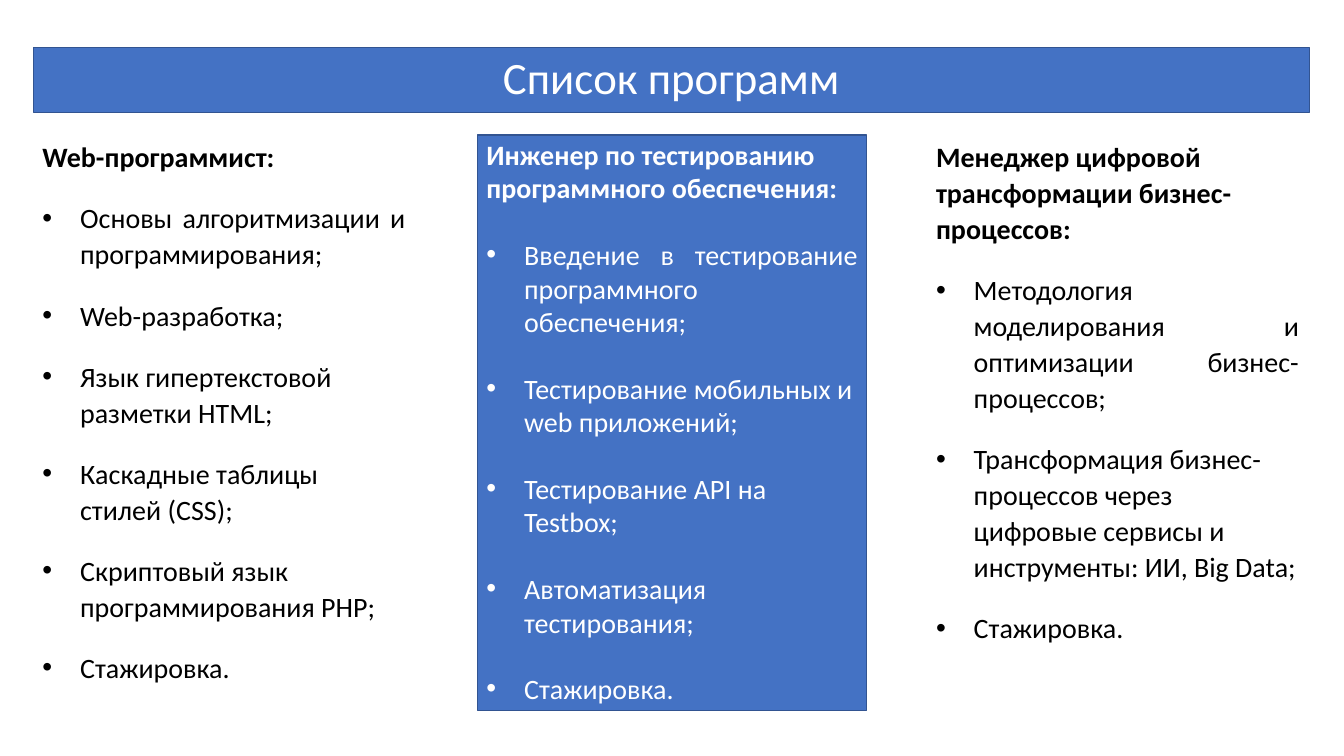
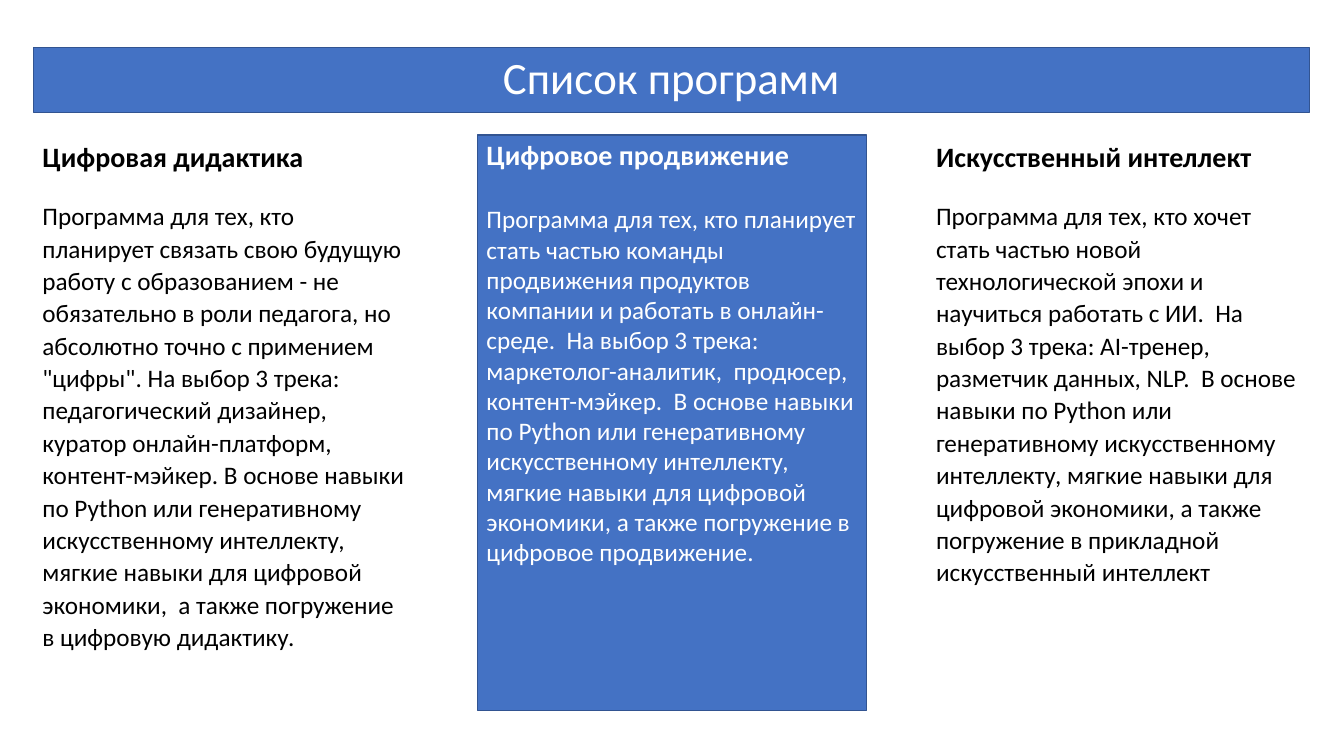
from dataclasses import dataclass

from lxml.etree import SubElement
from pptx import Presentation
from pptx.dml.color import RGBColor
from pptx.enum.shapes import MSO_SHAPE
from pptx.enum.text import MSO_ANCHOR, PP_ALIGN
from pptx.oxml.ns import qn
from pptx.util import Cm, Pt


# Theme: colours, font, type sizes in points
@dataclass(frozen=True)
class Theme:
    fill: RGBColor = RGBColor(0x44, 0x72, 0xC4)
    edge: RGBColor = RGBColor(0x32, 0x54, 0x91)
    dark: RGBColor = RGBColor(0, 0, 0)
    light: RGBColor = RGBColor(255, 255, 255)
    font: str = "Calibri"
    title: int = 32
    head: int = 20
    body: int = 18


@dataclass(frozen=True)
class Box:
    left: float
    top: float
    width: float
    height: float

    def cm(self) -> tuple:
        return Cm(self.left), Cm(self.top), Cm(self.width), Cm(self.height)


# Paragraph spacing of a column: line factor, points before and after
@dataclass(frozen=True)
class Gap:
    line: float
    before: float
    after: float


@dataclass(frozen=True)
class Item:
    text: str
    just: bool = False


@dataclass(frozen=True)
class Column:
    head: str
    items: tuple = ()
    prose: str = ""


THEME = Theme()
TITLE = "Список программ"
INDENT = Cm(0.95)
BAND = Box(0.84, 1.2, 32.16, 1.63)
PANEL = Box(12.04, 3.4, 9.8, 14.5)
LEFT = Box(0.82, 3.34, 9.65, 15.37)
RIGHT = Box(23.34, 3.34, 9.65, 15.37)
SIDE, TOP = Cm(0.22), Cm(0.06)
LOOSE = Gap(1.07, 10, 8)
TIGHT = Gap(1, 23.5, 0)
END = Item("Стажировка.", True)

# Content: left, middle and right column of each slide
SLIDES = (
    (
        Column("Web-программист:", (
            Item("Основы алгоритмизации и программирования;", True),
            Item("Web-разработка;", True),
            Item("Язык гипертекстовой разметки HTML;"),
            Item("Каскадные таблицы стилей (CSS);"),
            Item("Скриптовый язык программирования PHP;"),
            END,
        )),
        Column("Инженер по тестированию программного обеспечения:", (
            Item("Введение в тестирование программного обеспечения;", True),
            Item("Тестирование мобильных и web приложений;"),
            Item("Тестирование API на Testbox;"),
            Item("Автоматизация тестирования;", True),
            END,
        )),
        Column("Менеджер цифровой трансформации бизнес-процессов:", (
            Item("Методология моделирования и оптимизации бизнес-процессов;", True),
            Item("Трансформация бизнес-процессов через цифровые сервисы "
                 "и инструменты: ИИ, Big Data;"),
            END,
        )),
    ),
    (
        Column("Цифровая дидактика", prose=(
            "Программа для тех, кто планирует связать свою будущую работу "
            "с образованием - не обязательно в роли педагога, но абсолютно "
            "точно с примением \"цифры\". На выбор 3 трека: педагогический "
            "дизайнер, куратор онлайн-платформ, контент-мэйкер. В основе "
            "навыки по Python или генеративному искусственному интеллекту, "
            "мягкие навыки для цифровой экономики,  а также погружение "
            "в цифровую дидактику.")),
        Column("Цифровое продвижение", prose=(
            "Программа для тех, кто планирует стать частью команды "
            "продвижения продуктов компании и работать в онлайн-среде.  "
            "На выбор 3 трека: маркетолог-аналитик,  продюсер, "
            "контент-мэйкер.  В основе навыки по Python или генеративному "
            "искусственному интеллекту, мягкие навыки для цифровой "
            "экономики, а также погружение в цифровое продвижение.")),
        Column("Искусственный интеллект", prose=(
            "Программа для тех, кто хочет стать частью новой технологической "
            "эпохи и научиться работать с ИИ.  На выбор 3 трека: AI-тренер,  "
            "разметчик данных, NLP.  В основе навыки по Python или "
            "генеративному искусственному интеллекту, мягкие навыки для "
            "цифровой экономики, а также погружение в прикладной "
            "искусственный интеллект")),
    ),
)


# Text helpers
def style(para, text: str, size: int, color: RGBColor, bold: bool = False,
          align=PP_ALIGN.LEFT) -> None:
    para.text = text
    para.alignment = align
    font = para.font
    font.name, font.size, font.bold = THEME.font, Pt(size), bold
    font.color.rgb = color


def space(para, gap: Gap) -> None:
    para.line_spacing = gap.line
    para.space_before = Pt(gap.before)
    para.space_after = Pt(gap.after)


def bullet(para) -> None:
    props = para._p.get_or_add_pPr()
    props.set("marL", str(INDENT))
    props.set("indent", str(-INDENT))
    SubElement(props, qn("a:buFont")).set("typeface", "Arial")
    SubElement(props, qn("a:buChar")).set("char", "•")


# Slide parts
def block(slide, box: Box, anchor):
    shape = slide.shapes.add_shape(MSO_SHAPE.RECTANGLE, *box.cm())
    shape.shadow.inherit = False
    shape.fill.solid()
    shape.fill.fore_color.rgb = THEME.fill
    shape.line.color.rgb = THEME.edge
    shape.line.width = Pt(1)
    shape.text_frame.vertical_anchor = anchor
    return shape.text_frame


def panel(slide):
    frame = block(slide, PANEL, MSO_ANCHOR.TOP)
    frame.margin_left = frame.margin_right = SIDE
    frame.margin_top = TOP
    return frame


def plain(slide, box: Box):
    return slide.shapes.add_textbox(*box.cm()).text_frame


def write(frame, col: Column, color: RGBColor, gap: Gap) -> None:
    frame.word_wrap = True
    style(frame.paragraphs[0], col.head, THEME.head, color, bold=True)
    frame.paragraphs[0].line_spacing = gap.line
    frame.paragraphs[0].space_after = Pt(gap.after)
    for item in col.items:
        para = frame.add_paragraph()
        bullet(para)
        space(para, gap)
        align = PP_ALIGN.JUSTIFY if item.just else PP_ALIGN.LEFT
        style(para, item.text, THEME.head, color, align=align)
    if col.prose:
        para = frame.add_paragraph()
        space(para, gap)
        style(para, col.prose, THEME.body, color)


def draw(slide, cols: tuple) -> None:
    band = block(slide, BAND, MSO_ANCHOR.MIDDLE).paragraphs[0]
    band.line_spacing = 0.9
    style(band, TITLE, THEME.title, THEME.light, align=PP_ALIGN.CENTER)
    left, middle, right = cols
    write(plain(slide, LEFT), left, THEME.dark, LOOSE)
    write(panel(slide), middle, THEME.light, TIGHT)
    write(plain(slide, RIGHT), right, THEME.dark, LOOSE)


def main() -> None:
    deck = Presentation()
    deck.slide_width, deck.slide_height = Cm(33.87), Cm(19.05)
    for cols in SLIDES:
        draw(deck.slides.add_slide(deck.slide_layouts[6]), cols)
    deck.save("out.pptx")


if __name__ == "__main__":
    main()
